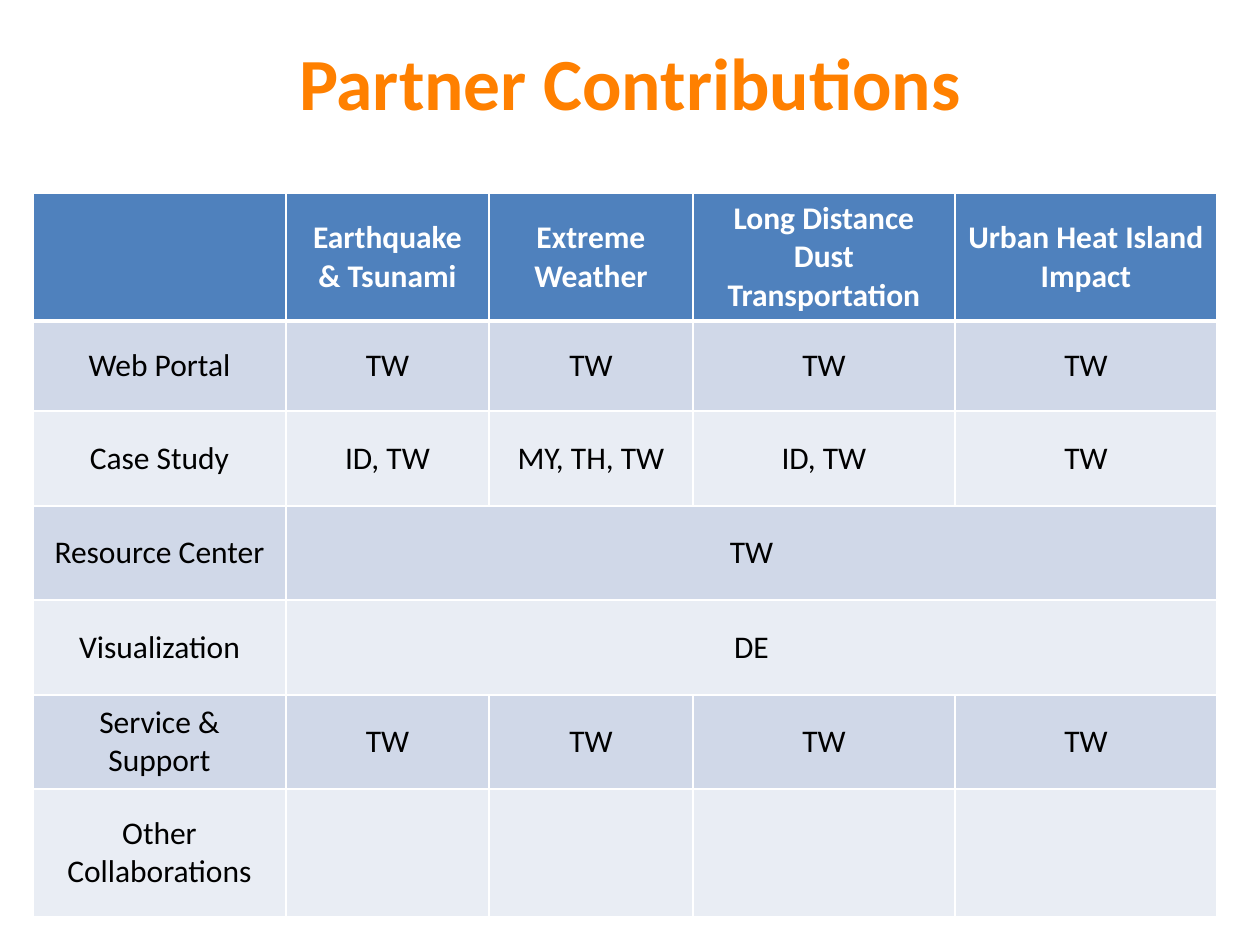
import pptx
import pptx.dml.color
import pptx.enum.text
import pptx.oxml
import pptx.oxml.ns
import pptx.util

RGBColor = pptx.dml.color.RGBColor
ORANGE = RGBColor(0xFF, 0x80, 0x00)
BLUE = RGBColor(0x4F, 0x81, 0xBD)
BAND_DARK = RGBColor(0xD0, 0xD8, 0xE8)
BAND_LIGHT = RGBColor(0xE9, 0xED, 0xF4)
WHITE = RGBColor(0xFF, 0xFF, 0xFF)
BLACK = RGBColor(0x00, 0x00, 0x00)

SCALE = 914400 / 126  # EMU per px


def px(length):
    return pptx.util.Emu(round(length * SCALE))


def write_text(frame, text, *, size=18, color=BLACK, bold=False):
    frame.word_wrap = True
    frame.vertical_anchor = pptx.enum.text.MSO_ANCHOR.MIDDLE
    para = frame.paragraphs[0]
    para.alignment = pptx.enum.text.PP_ALIGN.CENTER
    span = para.add_run()
    span.text = text
    span.font.name = "Calibri"
    span.font.size = pptx.util.Pt(size)
    span.font.bold = bold
    span.font.color.rgb = color


deck = pptx.Presentation()
deck.slide_width, deck.slide_height = px(1260), px(945)
page = deck.slides.add_slide(deck.slide_layouts[5])

# Title
title = page.shapes.title
title.left, title.top, title.width, title.height = px(63), px(3), px(1134), px(157)
write_text(title.text_frame, "Partner Contributions", size=42, color=ORANGE, bold=True)

# Contribution table: a row with a single entry spans all four topics
ROWS = [
    ["", "Earthquake & Tsunami", "Extreme Weather",
     "Long Distance Dust Transportation", "Urban Heat Island Impact"],
    ["Web Portal", "TW", "TW", "TW", "TW"],
    ["Case Study", "ID, TW", "MY, TH, TW", "ID, TW", "TW"],
    ["Resource Center", "TW"],
    ["Visualization", "DE"],
    ["Service & Support", "TW", "TW", "TW", "TW"],
    ["Other Collaborations", "", "", "", ""],
]
COLUMN_WIDTHS = [253, 203, 204, 262, 262]
ROW_HEIGHTS = [128, 90, 95, 94, 95, 94, 128]

table = page.shapes.add_table(
    len(ROW_HEIGHTS), len(COLUMN_WIDTHS), px(33), px(193),
    px(sum(COLUMN_WIDTHS)), px(sum(ROW_HEIGHTS))).table
for column, width in zip(table.columns, COLUMN_WIDTHS):
    column.width = px(width)
for row, height in zip(table.rows, ROW_HEIGHTS):
    row.height = px(height)

for r, entries in enumerate(ROWS):
    header = r == 0
    fill = BLUE if header else (BAND_DARK if r % 2 else BAND_LIGHT)
    if len(entries) == 2:
        table.cell(r, 1).merge(table.cell(r, len(COLUMN_WIDTHS) - 1))

    for c in range(len(COLUMN_WIDTHS)):
        cell = table.cell(r, c)

        # White borders, with a thicker rule under the header
        properties = cell._tc.get_or_add_tcPr()
        for side in ("L", "R", "T", "B"):
            under_header = (header and side == "B") or (r == 1 and side == "T")
            width = pptx.util.Pt(3 if under_header else 1)
            properties.append(pptx.oxml.parse_xml(
                f'<a:ln{side} {pptx.oxml.ns.nsdecls("a")} w="{width}"><a:solidFill>'
                f'<a:srgbClr val="{WHITE}"/></a:solidFill></a:ln{side}>'))

        cell.fill.solid()
        cell.fill.fore_color.rgb = fill
        cell.vertical_anchor = pptx.enum.text.MSO_ANCHOR.MIDDLE
        if c < len(entries) and entries[c]:
            write_text(cell.text_frame, entries[c],
                       color=WHITE if header else BLACK, bold=header)

deck.save("out.pptx")
